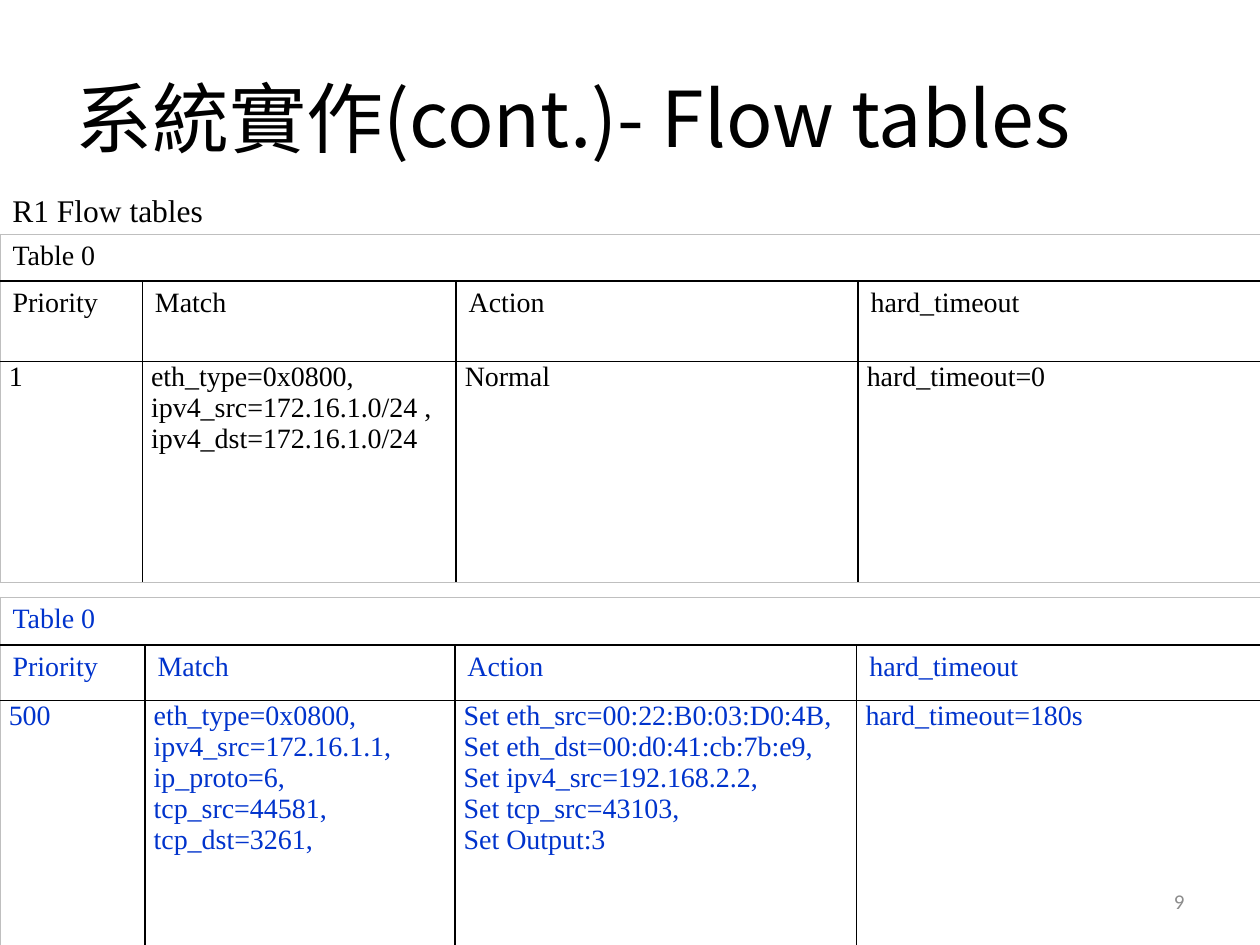
"""Build the flow tables slide: a title, a caption and two router flow tables."""
import lxml.etree
import pptx
import pptx.dml.color
import pptx.enum.text
import pptx.oxml.ns
import pptx.util

Inches = pptx.util.Inches
Align = pptx.enum.text.PP_ALIGN
Anchor = pptx.enum.text.MSO_ANCHOR

THEME = {
    "title": {"name": "Noto Sans CJK SC", "size": 44, "color": "000000"},
    "caption": {"name": "Times New Roman", "size": 18, "color": "000000"},
    "default flow": {"name": "Times New Roman", "size": 16, "color": "000000"},
    "session flow": {"name": "Times New Roman", "size": 16, "color": "0033CC"},
    "number": {"name": "Calibri", "size": 12, "color": "8C8C8C"},
    "grid": ("000000", 1),
    "frame": ("BFBFBF", 0.5),
}
SLIDE_WIDTH, SLIDE_HEIGHT = 10, 7.5
TITLE = "系統實作(cont.)- Flow tables"
CAPTION = "R1 Flow tables"
PAGE_NUMBER = "9"
NAME = "Table 0"
HEADINGS = ["Priority", "Match", "Action", "hard_timeout"]
FLOW_TABLES = [
    {
        "style": "default flow",
        "top": 1.86,
        "columns": [1.13, 2.49, 3.19, 3.19],
        "rows": [0.37, 0.64, 1.75],
        "entry": [
            "1",
            "eth_type=0x0800,\nipv4_src=172.16.1.0/24 ,\vipv4_dst=172.16.1.0/24",
            "Normal",
            "hard_timeout=0",
        ],
    },
    {
        "style": "session flow",
        "top": 4.74,
        "columns": [1.15, 2.46, 3.19, 3.2],
        "rows": [0.38, 0.44, 1.94],
        "entry": [
            "500",
            "eth_type=0x0800,\nipv4_src=172.16.1.1,\nip_proto=6,\n"
            "tcp_src=44581,\ntcp_dst=3261,",
            "Set eth_src=00:22:B0:03:D0:4B,\nSet eth_dst=00:d0:41:cb:7b:e9,\n"
            "Set ipv4_src=192.168.2.2,\nSet tcp_src=43103,\nSet Output:3",
            "hard_timeout=180s",
        ],
    },
]


def write(text_frame, text, style, alignment=Align.LEFT):
    """Fill a text frame and format every run with a theme style."""
    text_frame.text = text
    theme = THEME[style]
    for paragraph in text_frame.paragraphs:
        paragraph.alignment = alignment
        for run in paragraph.runs:
            formats = {"name": theme["name"], "size": pptx.util.Pt(theme["size"])}
            for attribute, value in formats.items():
                setattr(run.font, attribute, value)
            run.font.color.rgb = pptx.dml.color.RGBColor.from_string(theme["color"])
            east_asian = lxml.etree.Element(pptx.oxml.ns.qn("a:ea"), typeface=theme["name"])
            run.font._element.find(pptx.oxml.ns.qn("a:latin")).addnext(east_asian)


def place(shape, left, top, width, height):
    """Set the position and size of a shape in inches."""
    box = {"left": left, "top": top, "width": width, "height": height}
    for attribute, value in box.items():
        setattr(shape, attribute, Inches(value))


def draw_borders(cell, outer_sides):
    """Give a cell grid lines inside the table and frame lines on its outer sides."""
    properties = cell._tc.get_or_add_tcPr()
    for index, side in enumerate("LRTB"):
        color, width = THEME["frame" if side in outer_sides else "grid"]
        line = lxml.etree.Element(pptx.oxml.ns.qn(f"a:ln{side}"), w=str(pptx.util.Pt(width)))
        fill = lxml.etree.SubElement(line, pptx.oxml.ns.qn("a:solidFill"))
        lxml.etree.SubElement(fill, pptx.oxml.ns.qn("a:srgbClr"), val=color)
        properties.insert(index, line)


def add_flow_table(slide, flow):
    """Add one flow table with its name, headings and entry."""
    columns, rows = flow["columns"], flow["rows"]
    frame = slide.shapes.add_table(
        len(rows), len(columns), 0, Inches(flow["top"]),
        Inches(sum(columns)), Inches(sum(rows)),
    )
    table = frame.table
    table.first_row = table.horz_banding = False
    for column, width in zip(table.columns, columns):
        column.width = Inches(width)
    for row, height in zip(table.rows, rows):
        row.height = Inches(height)
    last_row, last_column = len(rows) - 1, len(columns) - 1
    table.cell(0, 0).merge(table.cell(0, last_column))
    contents = [[NAME], HEADINGS, flow["entry"]]
    for r in range(len(rows)):
        for c in range(len(columns)):
            cell = table.cell(r, c)
            cell.fill.background()
            edges = {"L": c == 0, "R": c == last_column or r == 0, "T": r == 0, "B": r == last_row}
            draw_borders(cell, [side for side, outer in edges.items() if outer])
            if c < len(contents[r]):
                write(cell.text_frame, contents[r][c], flow["style"])
            if r == last_row:
                cell.margin_left = cell.margin_right = Inches(0.07)
                cell.margin_top = cell.margin_bottom = 0


def add_label(slide, text, style, box, alignment=Align.LEFT, wrap=True, anchor=Anchor.TOP):
    """Add a text box with one styled line."""
    label = slide.shapes.add_textbox(*[Inches(length) for length in box])
    label.text_frame.word_wrap = wrap
    label.text_frame.vertical_anchor = anchor
    write(label.text_frame, text, style, alignment)


def main():
    presentation = pptx.Presentation()
    presentation.slide_width = Inches(SLIDE_WIDTH)
    presentation.slide_height = Inches(SLIDE_HEIGHT)
    slide = presentation.slides.add_slide(presentation.slide_layouts[5])
    title = slide.shapes.title
    place(title, 0.5, 0.3, 9, 1.25)
    title.text_frame.vertical_anchor = Anchor.MIDDLE
    write(title.text_frame, TITLE, "title")
    add_label(slide, PAGE_NUMBER, "number", (7.17, 6.95, 2.33, 0.4), Align.RIGHT, anchor=Anchor.MIDDLE)
    for flow in FLOW_TABLES:
        add_flow_table(slide, flow)
    add_label(slide, CAPTION, "caption", (0, 1.47, 1.73, 0.4), wrap=False)
    presentation.save("out.pptx")


if __name__ == "__main__":
    main()
